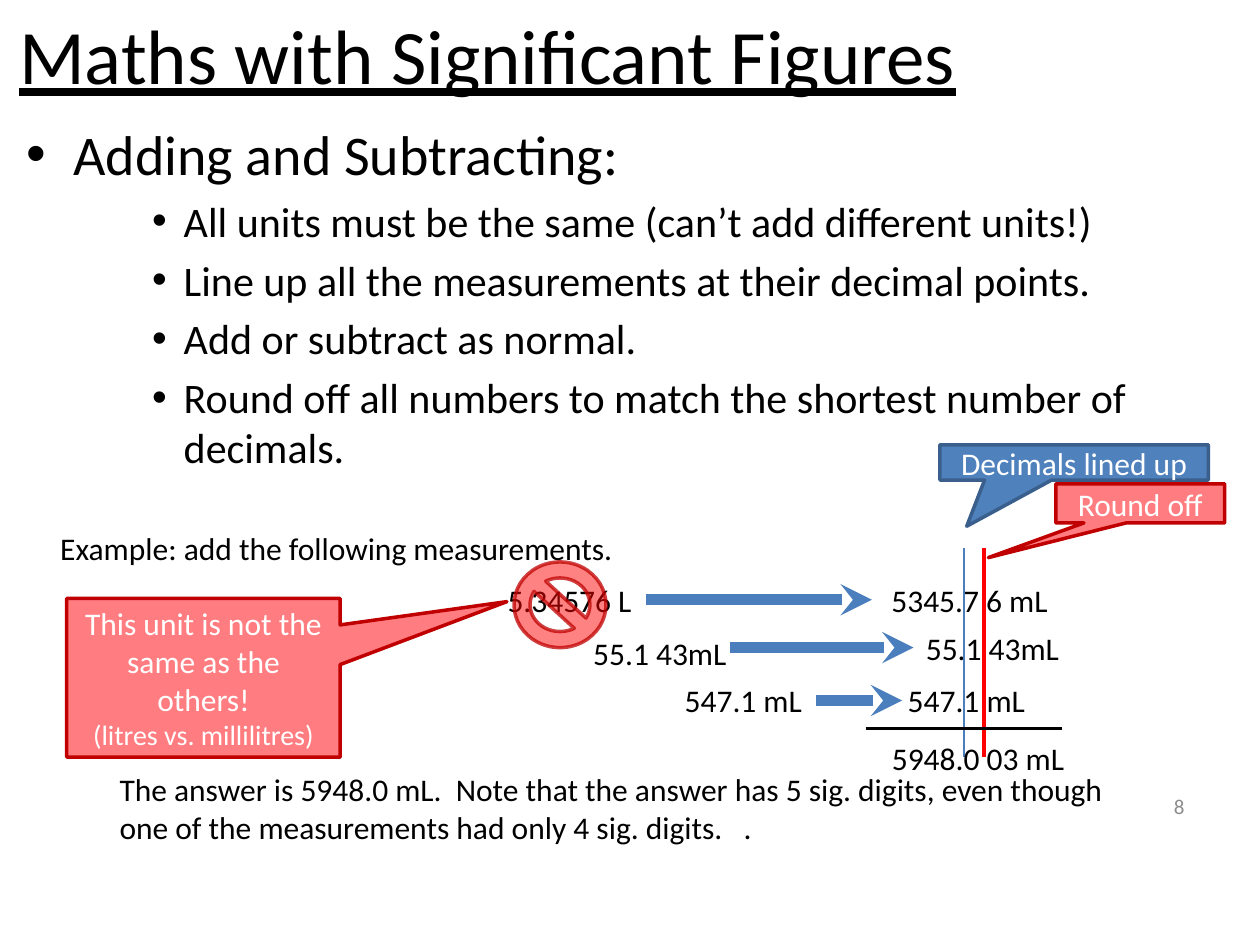
from dataclasses import dataclass

from lxml import etree
from pptx import Presentation
from pptx import util as u
from pptx.dml.color import RGBColor
from pptx.enum import shapes, text
from pptx.oxml import ns

COLUMNS, ROWS = 100, 75
CELL = u.Inches(0.1)
COLOURS = {
    "ink": "000000", "paper": "FFFFFF", "number": "8C8C8C",
    "blue": "4F81BD", "blue_edge": "3A5F8C", "arrow": "4B7EBC",
    "pink": "FF7C80", "red": "FF0000", "red_edge": "C00000",
}
LEFT, CENTER, RIGHT = text.PP_ALIGN.LEFT, text.PP_ALIGN.CENTER, text.PP_ALIGN.RIGHT
MIDDLE = text.MSO_ANCHOR.MIDDLE


@dataclass
class Box:
    left: float
    top: float
    width: float
    height: float

    def inner(self, left, top, width, height):
        return Box(self.left + left, self.top + top, width, height)

    def point(self, column, row):
        return cells(self.left + column, self.top + row)

    def lengths(self):
        return cells(self.left, self.top, self.width, self.height)


def cells(*counts):
    return [round(count * CELL) for count in counts]


def colour(name):
    return RGBColor.from_string(COLOURS[name])


def write(frame, words, first=False, size=18, ink="ink", align=LEFT,
          underline=None, before=0, hang=None):
    para = frame.paragraphs[0] if first else frame.add_paragraph()
    para.alignment = align
    para.space_before = u.Pt(before)
    span = para.add_run()
    span.text = words
    span.font.name = "Calibri"
    span.font.size = u.Pt(size)
    span.font.underline = underline
    span.font.color.rgb = colour(ink)
    if hang:
        margin, indent = cells(*hang)
        props = para._p.get_or_add_pPr()
        props.set("marL", str(margin))
        props.set("indent", str(-indent))
        etree.SubElement(props, ns.qn("a:buFont"), typeface="Arial")
        etree.SubElement(props, ns.qn("a:buChar"), char="•")


def add_label(page, box, words, wrap=False, grow=True, anchor=None, **style):
    label = page.shapes.add_textbox(*box.lengths())
    frame = label.text_frame
    frame.word_wrap = wrap
    frame.auto_size = (text.MSO_AUTO_SIZE.SHAPE_TO_FIT_TEXT if grow
                       else text.MSO_AUTO_SIZE.NONE)
    frame.vertical_anchor = anchor
    write(frame, words, first=True, **style)
    return label


def add_line(page, start, end, ink, width, arrow=False):
    line = page.shapes.add_connector(shapes.MSO_CONNECTOR.STRAIGHT, *start, *end)
    line.line.color.rgb = colour(ink)
    line.line.width = u.Pt(width)
    if arrow:
        outline = line._element.spPr.find(ns.qn("a:ln"))
        etree.SubElement(outline, ns.qn("a:tailEnd"), type="stealth")
    etree.SubElement(line._element.spPr, ns.qn("a:effectLst"))
    return line


def add_figure(page, kind, box, fill, edge):
    figure = page.shapes.add_shape(kind, *box.lengths())
    figure.shadow.inherit = False
    figure.fill.solid()
    figure.fill.fore_color.rgb = colour(fill)
    figure.line.color.rgb = colour(edge)
    figure.line.width = u.Pt(2)
    return figure


def add_callout(page, box, tip, lines, fill, edge):
    callout = add_figure(page, shapes.MSO_SHAPE.RECTANGULAR_CALLOUT, box, fill, edge)
    callout.adjustments[0], callout.adjustments[1] = tip
    frame = callout.text_frame
    frame.word_wrap = True
    frame.vertical_anchor = MIDDLE
    for index, (words, size) in enumerate(lines):
        write(frame, words, first=index == 0, size=size, ink="paper", align=CENTER)


def add_ban(page, box):
    ban = add_figure(page, shapes.MSO_SHAPE.NO_SYMBOL, box, "red", "red_edge")
    tints = list(ban._element.spPr.iter(ns.qn("a:srgbClr")))
    for tint, opacity in zip(tints, (49, 75)):
        etree.SubElement(tint, ns.qn("a:alpha"), val=str(opacity * 1000))


def add_rules(page, box):
    steps = add_label(page, box, "Adding and Subtracting:", wrap=True, grow=False,
                      size=32, before=6.4, hang=(3.75, 3.75))
    for words in (
        "All units must be the same (can’t add different units!)",
        "Line up all the measurements at their decimal points.",
        "Add or subtract as normal.",
        "Round off all numbers to match the shortest number of decimals.",
    ):
        write(steps.text_frame, words, size=24, before=4.8, hang=(12.5, 2.5))


def add_sum(page, box):
    litres = add_label(page, box.inner(0, 2.1, 12, 4), "5.34576 L")
    last_aligned = add_label(page, box.inner(31.2, 10.1, 12, 4), " 547.1 mL")
    first_aligned = add_label(page, box.inner(29.9, 2.1, 15.1, 4), " 5345.7 6 mL")
    middle_aligned = add_label(page, box.inner(33.2, 5.9, 12.7, 4), "55.1 43mL")
    last = add_label(page, box.inner(13.5, 10.1, 12, 4), last_aligned.text_frame.text)
    add_label(page, box.inner(6.8, 6.3, 12.7, 4), middle_aligned.text_frame.text)
    for column, ink, width in ((37.2, "arrow", 1.5), (38.8, "red", 2)):
        add_line(page, box.point(column, 0), box.point(column, box.height), ink, width)
    add_ban(page, box.inner(1.5, 1.1, 7.3, 6.8))
    for start, end, row, source, target in (
        (12, 29.9, 4.1, litres, first_aligned),
        (18.6, 33.2, 7.9, None, middle_aligned),
        (25.5, 32.3, 12.1, last, None),
    ):
        arrow = add_line(page, box.point(start, row), box.point(end, row),
                         "arrow", 6, arrow=True)
        if source:
            arrow.begin_connect(source, 3)
        if target:
            arrow.end_connect(target, 1)
    add_line(page, box.point(29.4, 14.3), box.point(45, 14.3), "ink", 2)
    add_label(page, box.inner(30.5, 14.7, 15.9, 4), "5948.0 03 mL")


def add_remarks(page, box):
    add_callout(page, box.inner(69.3, 0, 21.3, 2.8), (-0.4, 1.81),
                [("Decimals lined up", 18)], "blue", "blue_edge")
    add_callout(page, box.inner(78.5, 3.1, 13.4, 3.1), (-0.9, 1.39),
                [("Round off", 18)], "pink", "red_edge")
    add_callout(page, box.inner(0, 12.2, 21.7, 12.6), (1.11, -0.48),
                [("This unit is not the same as the others!", 18),
                 ("(litres vs. millilitres)", 16)], "pink", "red_edge")


def add_conclusion(page, box):
    add_label(page, box.inner(0, 0, 83.1, box.height),
              "The answer is 5948.0 mL.  Note that the answer has 5 sig. digits, "
              "even though one of the measurements had only 4 sig. digits.   .",
              wrap=True)
    add_label(page, box.inner(63.2, 1.4, 23.3, 4), "8", wrap=True, grow=False,
              anchor=MIDDLE, size=12, ink="number", align=RIGHT)


def main():
    deck = Presentation()
    deck.slide_width, deck.slide_height = cells(COLUMNS, ROWS)
    page = deck.slides.add_slide(deck.slide_layouts[6])
    add_label(page, Box(-6.3, -2, 90, 12.5), "Maths with Significant Figures",
              wrap=True, grow=False, anchor=MIDDLE, size=44, align=CENTER, underline=True)
    add_rules(page, Box(1.1, 9, 100.2, 32.1))
    add_label(page, Box(3.8, 41.5, 46.4, 4), "Example: add the following measurements.")
    add_sum(page, Box(39.3, 43.5, 46.4, 16.6))
    add_remarks(page, Box(5.3, 35.3, 91.9, 24.8))
    add_conclusion(page, Box(8.5, 60.6, 86.5, 7.1))
    deck.save("out.pptx")


if __name__ == "__main__":
    main()
